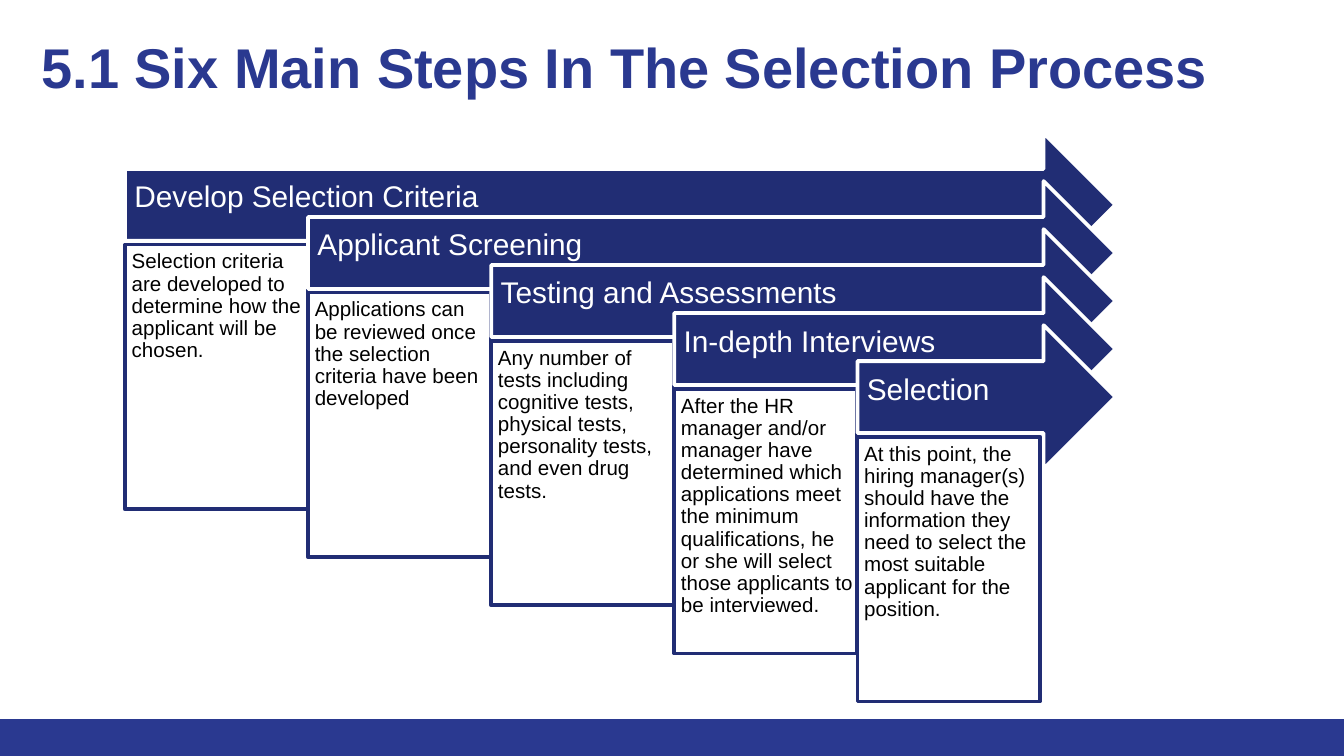
import pptx
import pptx.util
import pptx.dml.color
import pptx.enum.shapes
import pptx.enum.text

Inches = pptx.util.Inches
RGBColor = pptx.dml.color.RGBColor
MSO_SHAPE = pptx.enum.shapes.MSO_SHAPE
MSO_ANCHOR = pptx.enum.text.MSO_ANCHOR

BLUE = RGBColor(0x2A, 0x39, 0x90)
NAVY = RGBColor(0x21, 0x2D, 0x74)
WHITE = RGBColor(0xFF, 0xFF, 0xFF)
BLACK = RGBColor(0x00, 0x00, 0x00)


def add_box(kind, left, top, width, height, fill, line=None):
    shape = slide.shapes.add_shape(
        kind, Inches(left), Inches(top), Inches(width), Inches(height))
    shape.shadow.inherit = False
    shape.fill.solid()
    shape.fill.fore_color.rgb = fill
    if line is None:
        shape.line.fill.background()
    else:
        shape.line.color.rgb = line
        shape.line.width = pptx.util.Pt(2)


def add_text(left, top, width, height, text, size, color, insets,
             anchor=MSO_ANCHOR.TOP, spacing=0.9, bold=False):
    shape = slide.shapes.add_textbox(
        Inches(left), Inches(top), Inches(width), Inches(height))
    frame = shape.text_frame
    frame.word_wrap = True
    frame.vertical_anchor = anchor
    frame.margin_left, frame.margin_top, frame.margin_right, frame.margin_bottom = map(
        Inches, insets)
    paragraph = frame.paragraphs[0]
    paragraph.line_spacing = spacing
    run = paragraph.add_run()
    run.text = text
    run.font.name = "Arial"
    run.font.size = pptx.util.Pt(size)
    run.font.bold = bold
    run.font.color.rgb = color


presentation = pptx.Presentation()
presentation.slide_width = Inches(10)
presentation.slide_height = presentation.slide_width * 9 // 16
slide = presentation.slides.add_slide(presentation.slide_layouts[6])

add_box(MSO_SHAPE.RECTANGLE, 0, 5.35, 10, 0.28, BLUE)
add_text(0.21, 0.14, 9.32, 0.66, "5.1 Six Main Steps In The Selection Process", 30, BLUE,
         (0.1, 0.1, 0.1, 0.1), spacing=1.0, bold=True)

steps = [
    ("Develop Selection Criteria",
     "Selection criteria are developed to determine how the applicant will be chosen."),
    ("Applicant Screening",
     "Applications can be reviewed once the selection criteria have been developed"),
    ("Testing and Assessments",
     "Any number of tests including cognitive tests, physical tests, personality tests, "
     "and even drug tests."),
    ("In-depth Interviews",
     "After the HR manager and/or manager have determined which applications meet the minimum "
     "qualifications, he or she will select those applicants to be interviewed."),
    ("Selection",
     "At this point, the hiring manager(s) should have the information they need to select "
     "the most suitable applicant for the position."),
]
first_left, first_top = 0.93, 0.99
arrow_tip, arrow_height = 8.3, 1.07
box_width, box_height, box_drop = 1.36, 1.97, 0.83
step_right = (6.38 - first_left) / 4
step_down = (2.42 - first_top) / 4

for index, (heading, description) in enumerate(steps):
    left = first_left + index * step_right
    top = first_top + index * step_down
    arrow_width = arrow_tip - left
    add_box(MSO_SHAPE.RIGHT_ARROW, left, top, arrow_width, arrow_height, NAVY, WHITE)
    add_text(left, top + arrow_height / 4, arrow_width - arrow_height / 4, arrow_height / 2,
             heading, 16, WHITE, (0.07, 0.07, 0.28, 0.17), MSO_ANCHOR.MIDDLE)
    add_box(MSO_SHAPE.RECTANGLE, left, top + box_drop, box_width, box_height, WHITE, NAVY)
    add_text(left, top + box_drop, box_width, box_height,
             description, 11, BLACK, (0.05, 0.05, 0.03, 0.05))

presentation.save("out.pptx")
